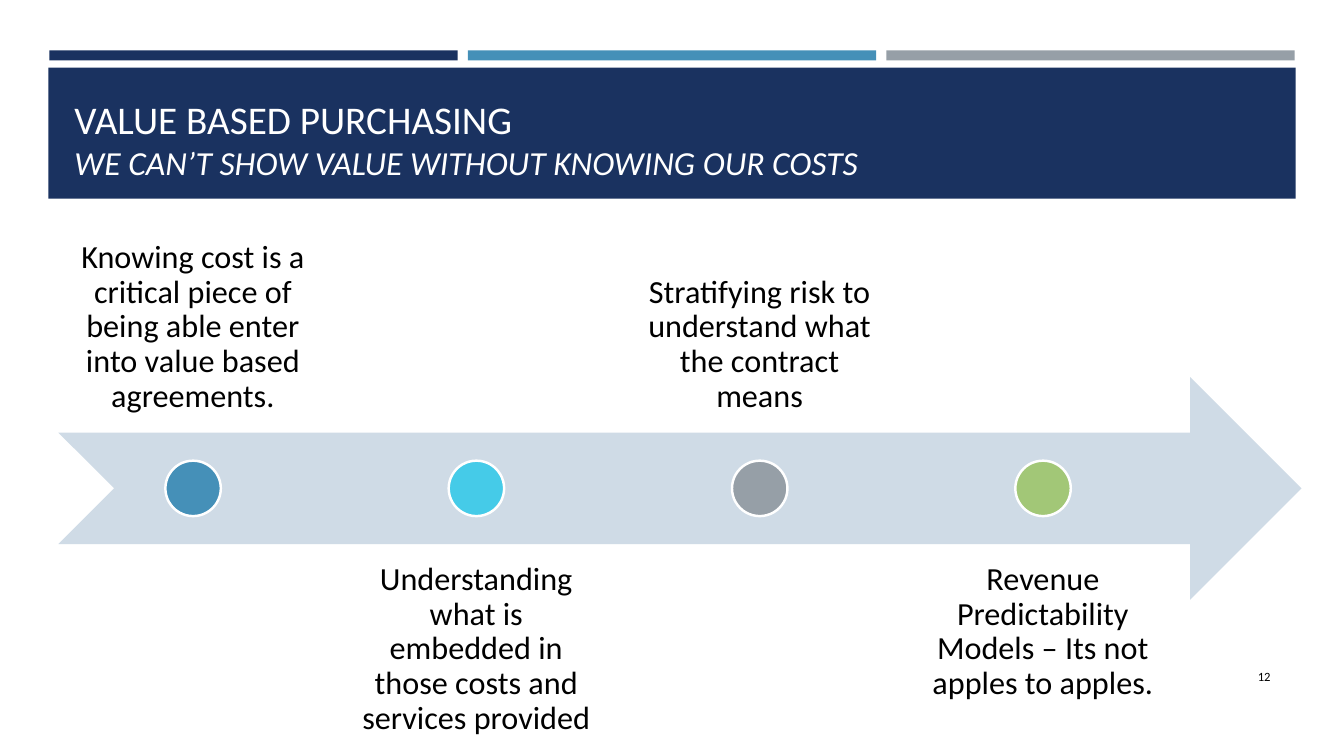
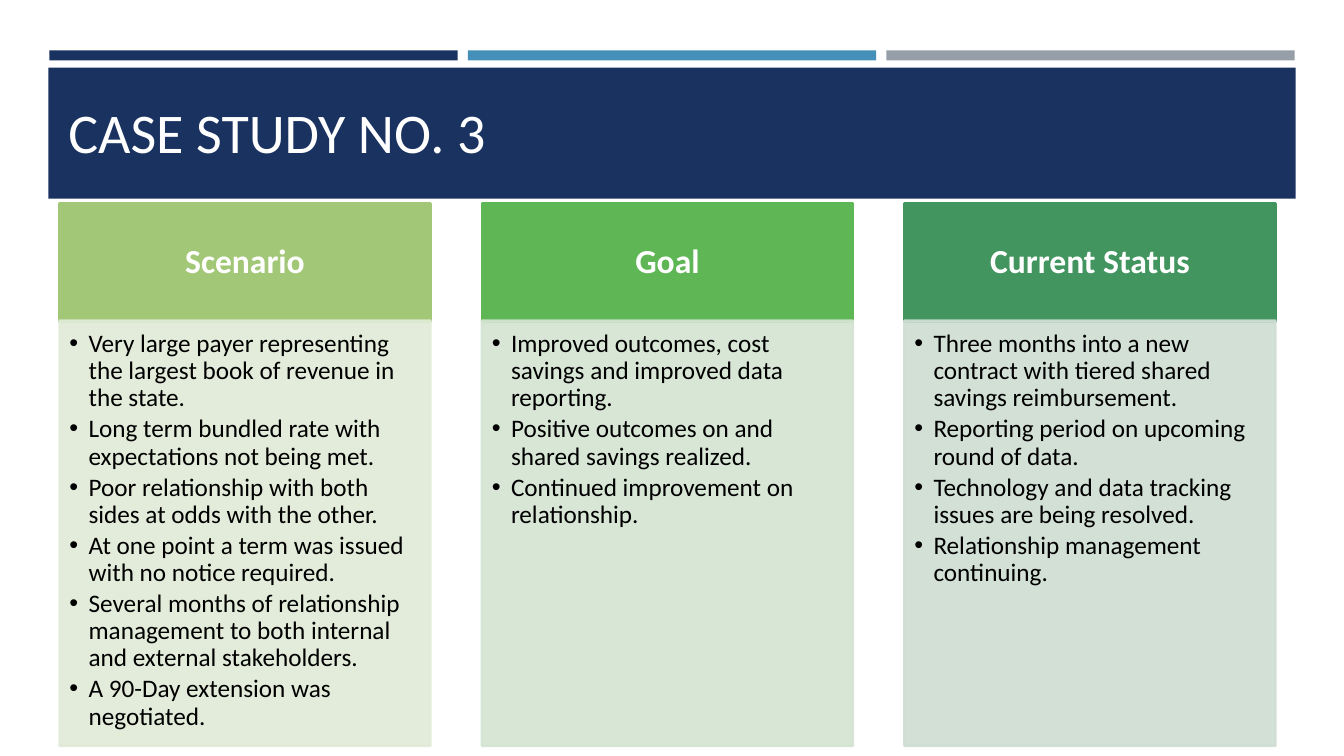
from dataclasses import dataclass

from pptx import Presentation
from pptx import util as u
from pptx.dml.color import RGBColor
from pptx.enum import shapes, text
from pptx.oxml.ns import qn
from lxml import etree

FONT = "Calibri"
COLORS = {
    "navy": "1A3260", "blue": "4590B8", "gray": "969FA7", "cyan": "45CBE8",
    "lime": "A2C777", "green": "5EB654", "forest": "42955F",
    "pale_blue": "CFDBE6", "pale_lime": "E0EBD6", "pale_green": "D4E4D2",
    "pale_forest": "CFDDD2", "white": "FFFFFF", "black": "000000",
}
SHAPE = shapes.MSO_SHAPE
ANCHOR = text.MSO_ANCHOR
ALIGN = text.PP_ALIGN


@dataclass(frozen=True)
class Box:
    left: float
    top: float
    width: float
    height: float

    def emu(self) -> list:
        return [u.Inches(v) for v in (self.left, self.top, self.width, self.height)]


@dataclass(frozen=True)
class Style:
    size: float
    color: str = "black"
    bold: bool = False
    italic: bool = False


@dataclass(frozen=True)
class Step:
    caption: str
    color: str
    above: bool


@dataclass(frozen=True)
class Column:
    heading: str
    color: str
    pale: str
    points: tuple


STEPS = (
    Step("Knowing cost is a critical piece of being able enter into value based agreements.",
         "blue", True),
    Step("Understanding what is embedded in those costs and services provided", "cyan", False),
    Step("Stratifying risk to understand what the contract means", "gray", True),
    Step("Revenue Predictability Models – Its not apples to apples.", "lime", False),
)
COLUMNS = (
    Column("Scenario", "lime", "pale_lime", (
        "Very large payer representing the largest book of revenue in the state.",
        "Long term bundled rate with expectations not being met.",
        "Poor relationship with both sides at odds with the other.",
        "At one point a term was issued with no notice required.",
        "Several months of relationship management to both internal and external stakeholders.",
        "A 90-Day extension was negotiated.",
    )),
    Column("Goal", "green", "pale_green", (
        "Improved outcomes, cost savings and improved data reporting.",
        "Positive outcomes on and shared savings realized.",
        "Continued improvement on relationship.",
    )),
    Column("Current Status", "forest", "pale_forest", (
        "Three months into a new contract with tiered shared savings reimbursement.",
        "Reporting period on upcoming round of data.",
        "Technology and data tracking issues are being resolved.",
        "Relationship management continuing.",
    )),
)


def rgb(name: str) -> RGBColor:
    return RGBColor.from_string(COLORS[name])


def add_shape(s, kind, box: Box, fill: str, line: str | None = None, opacity: int = 100):
    sp = s.shapes.add_shape(kind, *box.emu())
    sp.shadow.inherit = False
    sp.fill.solid()
    sp.fill.fore_color.rgb = rgb(fill)
    if line:
        sp.line.color.rgb = rgb(line)
        sp.line.width = u.Pt(1.75)
    else:
        sp.line.fill.background()
    if opacity < 100:
        for clr in sp._element.spPr.iter(qn("a:srgbClr")):
            etree.SubElement(clr, qn("a:alpha"), val=str(opacity * 1000))
    return sp


def set_frame(sp, anchor, insets: tuple = (0.1, 0.05, 0.1, 0.05)):
    tf = sp.text_frame
    tf.word_wrap = True
    tf.vertical_anchor = anchor
    tf.margin_left, tf.margin_top, tf.margin_right, tf.margin_bottom = map(u.Inches, insets)
    return tf


def add_run(p, words: str, style: Style) -> None:
    r = p.add_run()
    r.text = words
    r.font.name = FONT
    r.font.size = u.Pt(style.size)
    r.font.bold = style.bold
    r.font.italic = style.italic
    r.font.color.rgb = rgb(style.color)


def add_text(s, box: Box, words: str, style: Style, align, anchor,
             insets: tuple = (0.1, 0.05, 0.1, 0.05), spacing: float = 1.0) -> None:
    tf = set_frame(s.shapes.add_textbox(*box.emu()), anchor, insets)
    p = tf.paragraphs[0]
    p.alignment = align
    p.line_spacing = spacing
    add_run(p, words, style)


def add_bullets(tf, points: tuple, style: Style) -> None:
    for i, point in enumerate(points):
        p = tf.add_paragraph() if i else tf.paragraphs[0]
        p.alignment = ALIGN.LEFT
        p.line_spacing = 0.9
        p.space_after = u.Pt(2.7)
        pPr = p._p.get_or_add_pPr()
        pPr.set("marL", str(u.Inches(0.19)))
        pPr.set("indent", str(-u.Inches(0.19)))
        etree.SubElement(pPr, qn("a:buFont"), typeface="Arial")
        etree.SubElement(pPr, qn("a:buChar"), char="•")
        add_run(p, point, style)


def add_base(prs, box: Box, anchor, lines: tuple):
    s = prs.slides.add_slide(prs.slide_layouts[6])
    for i, color in enumerate(("navy", "blue", "gray")):
        add_shape(s, SHAPE.RECTANGLE, Box(0.49 + 4.15 * i, 0.5, 4.05, 0.1), color)
    add_shape(s, SHAPE.RECTANGLE, Box(0.48, 0.67, 12.37, 1.3), "navy")
    p = set_frame(s.shapes.add_textbox(*box.emu()), anchor).paragraphs[0]
    for i, (words, style) in enumerate(lines):
        if i:
            p.add_line_break()
        add_run(p, words, style)
    return s


def build_purchasing(prs) -> None:
    s = add_base(prs, Box(0.64, 0.75, 12.06, 1.11), ANCHOR.BOTTOM, (
        ("VALUE BASED PURCHASING", Style(28, "white")),
        ("WE CAN’T SHOW VALUE WITHOUT KNOWING OUR COSTS", Style(24, "white", italic=True)),
    ))
    add_shape(s, SHAPE.NOTCHED_RIGHT_ARROW, Box(0.58, 3.74, 12.33, 2.21), "pale_blue")
    for i, step in enumerate(STEPS):
        left = 0.58 + 2.81 * i
        add_text(s, Box(left, 2.08 if step.above else 5.4, 2.67, 2.21), step.caption,
                 Style(23), ALIGN.CENTER, ANCHOR.BOTTOM if step.above else ANCHOR.TOP,
                 (0.18,) * 4, 0.9)
        add_shape(s, SHAPE.OVAL, Box(left + 1.06, 4.57, 0.55, 0.55), step.color, "white")
    add_text(s, Box(11.55, 6.51, 1.15, 0.4), "12", Style(9), ALIGN.RIGHT, ANCHOR.MIDDLE)


def build_case_study(prs) -> None:
    s = add_base(prs, Box(0.58, 0.58, 11.5, 1.45), ANCHOR.MIDDLE,
                 (("CASE STUDY NO. 3", Style(40, "white")),))
    for i, column in enumerate(COLUMNS):
        left = 0.59 + 4.19 * i
        head = add_shape(s, SHAPE.RECTANGLE, Box(left, 2.02, 3.68, 1.17),
                         column.color, column.color)
        p = set_frame(head, ANCHOR.MIDDLE, (0.19, 0.11, 0.19, 0.11)).paragraphs[0]
        p.alignment = ALIGN.CENTER
        p.line_spacing = 0.9
        add_run(p, column.heading, Style(24, "white", bold=True))
        body = add_shape(s, SHAPE.RECTANGLE, Box(left, 3.18, 3.68, 4.22),
                         column.pale, column.pale, 90)
        add_bullets(set_frame(body, ANCHOR.TOP, (0.1, 0.1, 0.14, 0.16)),
                    column.points, Style(18))


def main() -> None:
    prs = Presentation()
    prs.slide_width, prs.slide_height = u.Inches(13.33), u.Inches(7.5)
    build_purchasing(prs)
    build_case_study(prs)
    prs.save("out.pptx")


if __name__ == "__main__":
    main()
